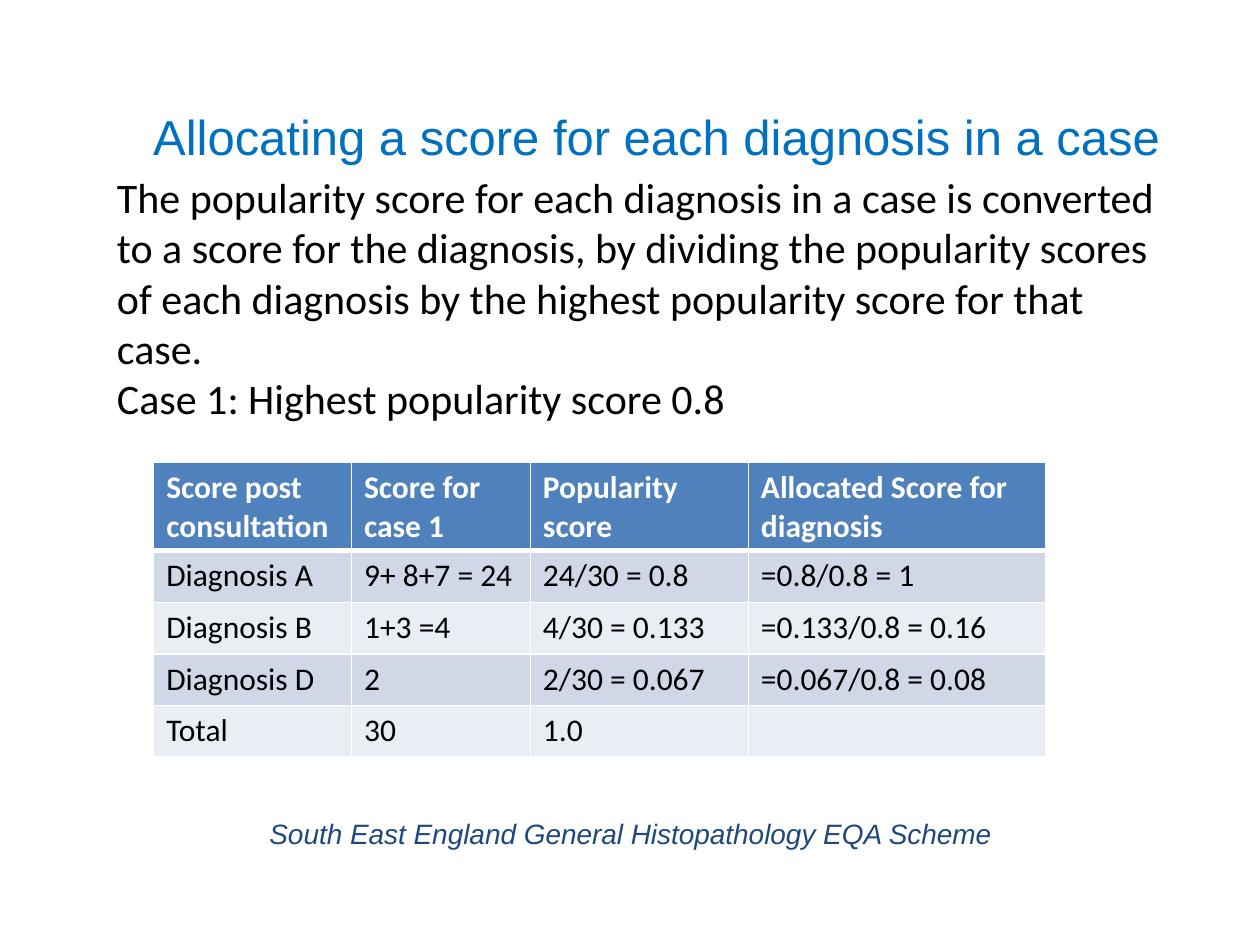
from pptx import Presentation
from pptx.dml.color import RGBColor
from pptx.enum.text import MSO_ANCHOR, PP_ALIGN
from pptx.oxml.ns import qn
from pptx.util import Inches, Pt
from lxml.etree import SubElement

TITLE_BLUE = RGBColor(0x00, 0x70, 0xC0)
NAVY = RGBColor(0x1F, 0x49, 0x7D)
BLACK = RGBColor(0x00, 0x00, 0x00)
WHITE = RGBColor(0xFF, 0xFF, 0xFF)
HEADER = RGBColor(0x4F, 0x81, 0xBD)
BANDS = RGBColor(0xD0, 0xD8, 0xE8), RGBColor(0xE9, 0xED, 0xF4)

COL_WIDTHS = 1.57, 1.42, 1.73, 2.36
HEADER_HEIGHT, ROW_HEIGHT = 0.7, 0.41
ROWS = [
    ("Score post consultation", "Score for case 1", "Popularity score",
     "Allocated Score for diagnosis"),
    ("Diagnosis A", "9+ 8+7 = 24", "24/30 = 0.8", "=0.8/0.8 = 1"),
    ("Diagnosis B", "1+3 =4", "4/30 = 0.133", "=0.133/0.8 = 0.16"),
    ("Diagnosis D", "2", "2/30 = 0.067", "=0.067/0.8 = 0.08"),
    ("Total", "30", "1.0", ""),
]
BODY = [
    "The popularity score for each diagnosis in a case is converted to a score "
    "for the diagnosis, by dividing the popularity scores of each diagnosis by "
    "the highest popularity score for that case.",
    "Case 1: Highest popularity score 0.8",
]


def style(p, size, name, color, bold=False, italic=False, align=PP_ALIGN.LEFT):
    p.alignment = align
    font = p.font
    font.size, font.name, font.color.rgb = Pt(size), name, color
    font.bold, font.italic = bold, italic


def add_title(s, text):
    title = s.shapes.title
    title.left, title.top = Inches(0.83), Inches(0.68)
    title.width, title.height = Inches(8.76), Inches(0.79)
    tf = title.text_frame
    tf.text = text
    tf.vertical_anchor = MSO_ANCHOR.MIDDLE
    style(tf.paragraphs[0], 28, "Arial", TITLE_BLUE, align=PP_ALIGN.CENTER)


def add_text(s, box, lines, *args, **kwargs):
    """Add a wrapping text box; the remaining arguments go to style()."""
    tf = s.shapes.add_textbox(*map(Inches, box)).text_frame
    tf.word_wrap = True
    tf.text = "\n".join(lines)
    for p in tf.paragraphs:
        style(p, *args, **kwargs)


def add_borders(cell, bottom):
    tcPr = cell._tc.get_or_add_tcPr()
    for side, width in ("L", 1), ("R", 1), ("T", 1), ("B", bottom):
        ln = SubElement(tcPr, qn(f"a:ln{side}"), w=str(Pt(width)))
        fill = SubElement(ln, qn("a:solidFill"))
        SubElement(fill, qn("a:srgbClr"), val=str(WHITE))


def add_score_table(s):
    height = HEADER_HEIGHT + ROW_HEIGHT * (len(ROWS) - 1)
    table = s.shapes.add_table(
        len(ROWS), len(COL_WIDTHS), Inches(1.22), Inches(3.67),
        Inches(sum(COL_WIDTHS)), Inches(height)).table
    for column, width in zip(table.columns, COL_WIDTHS):
        column.width = Inches(width)
    for i, (row, texts) in enumerate(zip(table.rows, ROWS)):
        header = i == 0
        row.height = Inches(HEADER_HEIGHT if header else ROW_HEIGHT)
        for cell, text in zip(row.cells, texts):
            cell.text = text
            style(cell.text_frame.paragraphs[0], 18, "Calibri",
                  WHITE if header else BLACK, bold=header)
            add_borders(cell, bottom=3 if header else 1)
            cell.fill.solid()
            cell.fill.fore_color.rgb = HEADER if header else BANDS[(i - 1) % 2]


def main():
    prs = Presentation()
    prs.slide_width, prs.slide_height = Inches(10), Inches(7.5)
    s = prs.slides.add_slide(prs.slide_layouts[5])
    add_title(s, "Allocating a score for each diagnosis in a case")
    add_text(s, (0.2, 6.43, 9.61, 0.37),
             ["South East England General Histopathology EQA Scheme"],
             16, "Arial", NAVY, italic=True, align=PP_ALIGN.CENTER)
    add_score_table(s)
    add_text(s, (0.83, 1.31, 8.5, 2.12), BODY, 24, "Calibri", BLACK)
    prs.save("out.pptx")


if __name__ == "__main__":
    main()
